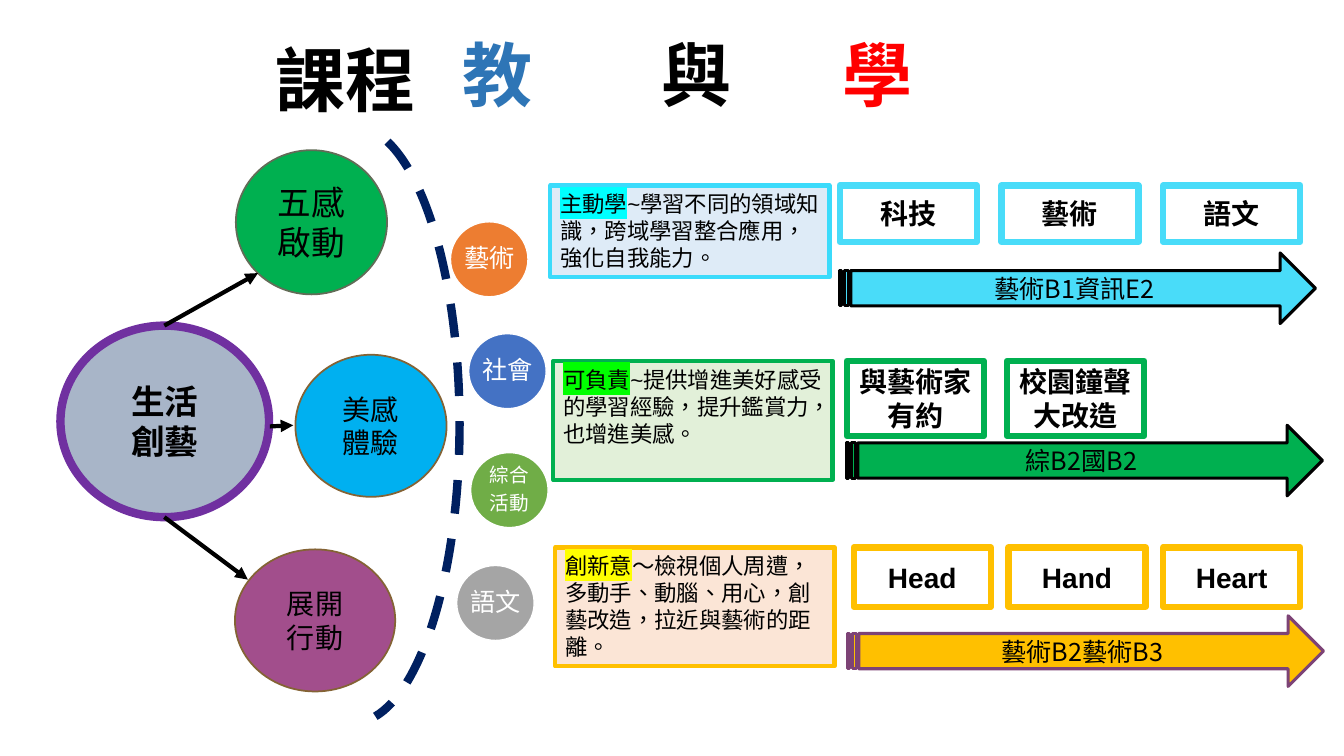
from pptx import Presentation
from pptx.dml.color import RGBColor
from pptx.enum.dml import MSO_LINE
from pptx.enum.lang import MSO_LANGUAGE_ID
from pptx.enum.shapes import MSO_CONNECTOR, MSO_SHAPE
from pptx.enum.text import MSO_ANCHOR, PP_ALIGN
from pptx.oxml.ns import qn
from pptx.util import Pt
from lxml import etree

OVAL, RECT, ARC = MSO_SHAPE.OVAL, MSO_SHAPE.RECTANGLE, MSO_SHAPE.ARC
ARROW = MSO_SHAPE.STRIPED_RIGHT_ARROW
LINE, DASH = MSO_CONNECTOR.STRAIGHT, MSO_LINE.DASH
TOP, MIDDLE = MSO_ANCHOR.TOP, MSO_ANCHOR.MIDDLE
LEFT, CENTER = PP_ALIGN.LEFT, PP_ALIGN.CENTER
CHINESE = MSO_LANGUAGE_ID.TRADITIONAL_CHINESE

THEME = {
    "cjk": "Noto Sans CJK SC", "sans": "Arial", "core": "League Spartan",
    "black": "000000", "white": "FFFFFF", "blue": "2E75B6", "red": "FF0000",
    "navy": "002060", "title": 50, "big": 24, "mid": 20, "label": 18,
    "note": 16, "small": 14, "pitch": 1.2, "tight": 0.9,
}

# Content: title boxes as (box, tab stops, runs)
TITLES = [
    ((189.4, 22.3, 139.7, 67.7), [], [("課程", "black")]),
    ((323.3, 18.7, 436.3, 67.7), [142.5, 271.5],
     [("教", "blue"), ("\t與\t", "black"), ("學", "red")]),
]
# Circles: lines, box, fill, outline, outline width, size, font, bold
CIRCLES = [
    (["生活", "創藝"], (43.2, 232.6, 149, 136.8), "A8B5C8", "7030A0", 6,
     "big", "core", True),
    (["五感啟動"], (168.5, 107.3, 108, 103), "00B050", "626C57", 1.25,
     "big", "cjk", False),
    (["美感", "體驗"], (211, 253.4, 108, 101.5), "00B0F0", "846335", 1.25,
     "mid", "cjk", False),
    (["展開", "行動"], (167.8, 392.4, 114.5, 101.5), "A24E8C", "846335", 1.25,
     "mid", "cjk", False),
]
LINKS = [
    (192.8, 304.6, 209.5, 303.8),
    (117.4, 369.4, 177.1, 414),
    (117.4, 232.6, 184.3, 195.1),
]
ARC_BOX, ARC_ENDS = (177.1, 90, 151.2, 426.2), (166.09, 51.46)
# Subjects: lines, left, top, fill, size
SUBJECTS = [
    (["藝術"], 321.8, 158.4, "ED7D31", "label"),
    (["語文"], 326.2, 403.9, "A5A5A5", "label"),
    (["社會"], 334.8, 238.3, "4472C4", "label"),
    (["綜合", "活動"], 336.2, 323.3, "70AD47", "small"),
]
DOT = (55.4, 53.6)
ROWS = [
    {"key": "主動學", "body": "~學習不同的領域知識，跨域學習整合應用，強化自我能力。",
     "mark": "00FFFF", "fill": "DEEBF7", "edge": "3BDBFB", "hue": "49DCF9",
     "rim": "000000", "left": 393.1, "top": 132.5, "tall": 65.5,
     "cards": ["科技", "藝術", "語文"], "start": 599.8, "step": 115.5,
     "high": 40.3, "goal": "藝術B1資訊E2", "from": 599.8, "at": 180.7},
    {"key": "可負責", "body": "~提供增進美好感受的學習經驗，提升鑑賞力，也增進美感。",
     "mark": "00FF00", "fill": "E2F0D9", "edge": "00B050", "hue": "00B050",
     "rim": "000000", "left": 395.3, "top": 257.8, "tall": 85,
     "cards": ["與藝術家有約", "校園鐘聲大改造"], "start": 604.8, "step": 114.5,
     "high": 53.6, "goal": "綜B2國B2", "from": 604.8, "at": 303.8},
    {"key": "創新意", "body": "～檢視個人周遭，多動手、動腦、用心，創藝改造，拉近與藝術的距離。",
     "mark": "FFFF00", "fill": "FBE5D6", "edge": "FFC000", "hue": "FFC000",
     "rim": "7D4376", "left": 396.7, "top": 391, "tall": 85,
     "cards": ["Head", "Hand", "Heart"], "start": 609.8, "step": 110.5,
     "high": 42.4, "goal": "藝術B2藝術B3", "from": 605.5, "at": 439.9},
]
NOTE_W, CARD_W, ARROW_SIZE = 199.4, 98, (339.8, 50.4)

deck = Presentation()
deck.slide_width, deck.slide_height = Pt(960), Pt(540)
slide = deck.slides.add_slide(deck.slide_layouts[6])
shapes = slide.shapes


def shade(code):
    return RGBColor.from_string(code)


def add_run(para, text, size, color, font="cjk", bold=False, mark=None):
    run = para.add_run()
    run.text = text
    face = run.font
    face.size, face.bold = Pt(THEME[size]), bold
    face.color.rgb = shade(THEME[color])
    face.name, face.language_id = THEME[font], CHINESE
    latin = run._r.rPr.find(qn("a:latin"))
    asian = etree.Element(qn("a:ea"), typeface=THEME["cjk"])
    latin.addnext(asian)
    if mark:
        glow = etree.Element(qn("a:highlight"))
        etree.SubElement(glow, qn("a:srgbClr"), val=mark)
        latin.addprevious(glow)


def add_para(frame, first, size, align=CENTER, scale=1):
    para = frame.paragraphs[0] if first else frame.add_paragraph()
    para.alignment = align
    para.line_spacing = Pt(THEME[size] * THEME["pitch"] * scale)
    return para


def add_lines(shape, lines, size, color="black", font="cjk", bold=False, scale=1):
    for i, text in enumerate(lines):
        para = add_para(shape.text_frame, i == 0, size, CENTER, scale)
        add_run(para, text, size, color, font, bold)


def add_form(kind, box, fill, edge, width, anchor=MIDDLE):
    form = shapes.add_shape(kind, *map(Pt, box))
    form.shadow.inherit = False
    if fill:
        form.fill.solid()
        form.fill.fore_color.rgb = shade(fill)
    else:
        form.fill.background()
    form.line.color.rgb = shade(edge)
    form.line.width = Pt(width)
    form.text_frame.word_wrap = True
    form.text_frame.vertical_anchor = anchor
    return form


# Circles, links and dashed arc
for lines, box, fill, edge, width, size, font, bold in CIRCLES:
    add_lines(add_form(OVAL, box, fill, edge, width), lines, size,
              font=font, bold=bold)

for ends in LINKS:
    link = shapes.add_connector(LINE, *map(Pt, ends))
    link.line.color.rgb = shade(THEME["black"])
    link.line.width = Pt(3)
    etree.SubElement(link.line._get_or_add_ln(), qn("a:tailEnd"), type="triangle")
    etree.SubElement(link._element.spPr, qn("a:effectLst"))

arc = add_form(ARC, ARC_BOX, None, THEME["navy"], 6)
arc.line.dash_style = DASH
for i, end in enumerate(ARC_ENDS):
    arc.adjustments[i] = end

# Titles
for box, stops, runs in TITLES:
    frame = shapes.add_textbox(*map(Pt, box)).text_frame
    frame.word_wrap, frame.vertical_anchor = True, MIDDLE
    para = add_para(frame, True, "title", LEFT)
    if stops:
        tabs = etree.SubElement(para._p.get_or_add_pPr(), qn("a:tabLst"))
        for stop in stops:
            etree.SubElement(tabs, qn("a:tab"), pos=str(Pt(stop)), algn="l")
    for text, color in runs:
        add_run(para, text, "title", color, bold=True)

# Rows: cards, arrow and note
for row in ROWS:
    for i, text in enumerate(row["cards"]):
        box = (row["start"] + i * row["step"], row["top"], CARD_W, row["high"])
        add_lines(add_form(RECT, box, None, row["hue"], 4.5), [text], "mid",
                  font="sans", bold=True)
    box = (row["from"], row["at"], *ARROW_SIZE)
    add_lines(add_form(ARROW, box, row["hue"], row["rim"], 2.25),
              [row["goal"]], "label")
    box = (row["left"], row["top"], NOTE_W, row["tall"])
    note = add_form(RECT, box, row["fill"], row["edge"], 3, TOP)
    para = add_para(note.text_frame, True, "note", LEFT)
    add_run(para, row["key"], "note", "black", "sans", mark=row["mark"])
    add_run(para, row["body"], "note", "black", "sans")

# Subject dots
for lines, left, top, fill, size in SUBJECTS:
    dot = add_form(OVAL, (left, top, *DOT), fill, THEME["white"], 1)
    frame = dot.text_frame
    frame.margin_left = frame.margin_right = 0
    frame.margin_top = frame.margin_bottom = 0
    add_lines(dot, lines, size, "white", scale=THEME["tight"])
    for para in frame.paragraphs[:-1]:
        para.space_after = Pt(5)

deck.save("out.pptx")
